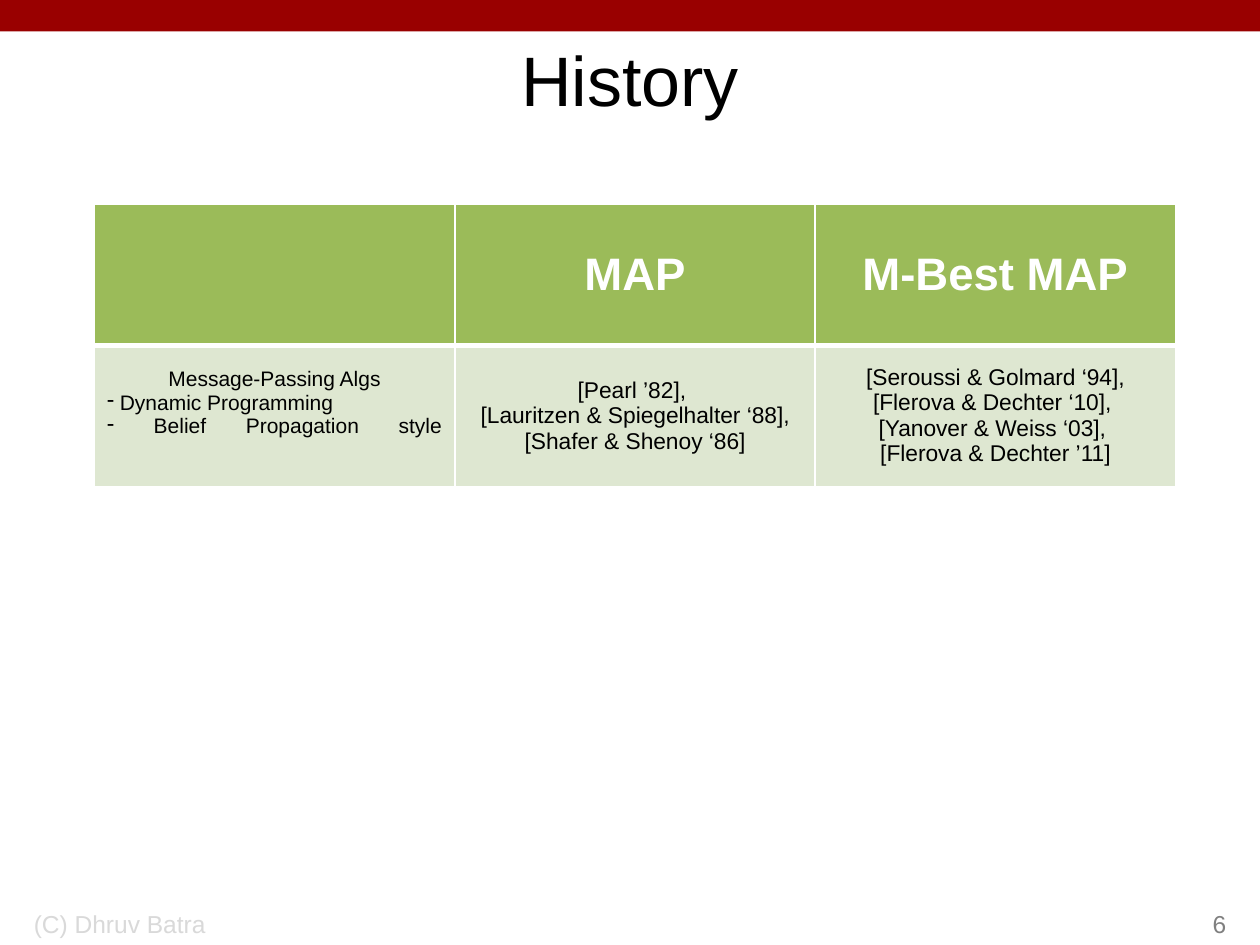
"""Build the History slide: a table of MAP and M-Best MAP references."""
import lxml.etree
import pptx
import pptx.dml.color
import pptx.enum.shapes
import pptx.enum.text
import pptx.oxml.ns
import pptx.util

Inches = pptx.util.Inches
Pt = pptx.util.Pt
ALIGN = pptx.enum.text.PP_ALIGN
ANCHOR = pptx.enum.text.MSO_ANCHOR
qn = pptx.oxml.ns.qn

COLORS = {"bar": "990000", "header": "9BBB59", "body": "DEE7D1", "white": "FFFFFF",
          "black": "000000", "credit": "D9D9D9", "number": "808080"}
FONT = "Arial"
WIDTH, HEIGHT = 10, 7.5
TABLE_LEFT, TABLE_TOP, COLUMN_WIDTH, ROW_HEIGHT = 0.75, 1.62, 2.86, 1.12

TITLE = "History"
HEADERS = ["", "MAP", "M-Best MAP"]
METHOD = ["Message-Passing Algs", " Dynamic Programming", " Belief Propagation style\n"]
REFERENCES = [
    "[Pearl ’82], \n[Lauritzen & Spiegelhalter ‘88], [Shafer & Shenoy ‘86]",
    "[Seroussi & Golmard ‘94], [Flerova & Dechter ‘10], \n"
    "[Yanover & Weiss ‘03], \n[Flerova & Dechter ’11]",
]
FOOTERS = [
    ("(C) Dhruv Batra", 0.17, 3.17, ALIGN.LEFT, "credit"),
    ("6", 7.75, 2.08, ALIGN.RIGHT, "number"),
]


def rgb(name):
    return pptx.dml.color.RGBColor.from_string(COLORS[name])


def write(para, text, size, color, align=ALIGN.CENTER, bold=False):
    para.text = text
    para.alignment = align
    for span in para.runs:
        span.font.name = FONT
        span.font.size = Pt(size)
        span.font.bold = bold
        span.font.color.rgb = rgb(color)
    for line_break in para._p.findall(qn("a:br")):
        lxml.etree.SubElement(line_break, qn("a:rPr"), sz=str(size * 100))
    lxml.etree.SubElement(para._p, qn("a:endParaRPr"), sz=str(size * 100))


def add_dash(para):
    properties = para._p.get_or_add_pPr()
    properties.set("marL", "0")
    properties.set("indent", "0")
    lxml.etree.SubElement(properties, qn("a:buChar"), char="-")


def style_cell(cell, fill, top, bottom):
    properties = cell._tc.get_or_add_tcPr()
    for side, points in (("L", 1), ("R", 1), ("T", top), ("B", bottom)):
        line = lxml.etree.SubElement(properties, qn(f"a:ln{side}"), w=str(Pt(points)))
        solid = lxml.etree.SubElement(line, qn("a:solidFill"))
        lxml.etree.SubElement(solid, qn("a:srgbClr"), val=COLORS["white"])
    cell.fill.solid()
    cell.fill.fore_color.rgb = rgb(fill)
    cell.vertical_anchor = ANCHOR.MIDDLE


def add_history_table(page):
    columns = len(HEADERS)
    table = page.shapes.add_table(
        2, columns, Inches(TABLE_LEFT), Inches(TABLE_TOP),
        Inches(COLUMN_WIDTH * columns), Inches(ROW_HEIGHT * 2)).table
    for column in table.columns:
        column.width = Inches(COLUMN_WIDTH)
    for row in table.rows:
        row.height = Inches(ROW_HEIGHT)

    for index, header in enumerate(HEADERS):
        style_cell(table.cell(0, index), "header", 1, 3)
        style_cell(table.cell(1, index), "body", 3, 1)
        write(table.cell(0, index).text_frame.paragraphs[0], header, 26, "white", bold=True)

    frame = table.cell(1, 0).text_frame
    write(frame.paragraphs[0], METHOD[0], 12, "black")
    for item in METHOD[1:]:
        para = frame.add_paragraph()
        write(para, item, 12, "black", ALIGN.JUSTIFY)
        add_dash(para)
    for index, reference in enumerate(REFERENCES, 1):
        write(table.cell(1, index).text_frame.paragraphs[0], reference, 13, "black")


def main():
    deck = pptx.Presentation()
    deck.slide_width, deck.slide_height = Inches(WIDTH), Inches(HEIGHT)
    page = deck.slides.add_slide(deck.slide_layouts[5])

    bar = page.shapes.add_shape(
        pptx.enum.shapes.MSO_SHAPE.RECTANGLE, 0, 0, Inches(WIDTH), Inches(0.25))
    bar.shadow.inherit = False
    bar.fill.solid()
    bar.fill.fore_color.rgb = rgb("bar")
    bar.line.fill.background()

    title = page.shapes.title
    title.left, title.top = Inches(0.75), Inches(0.25)
    title.width, title.height = Inches(8.5), Inches(0.75)
    title.text_frame.vertical_anchor = ANCHOR.MIDDLE
    write(title.text_frame.paragraphs[0], TITLE, 40, "black")

    add_history_table(page)

    for text, left, width, align, color in FOOTERS:
        box = page.shapes.add_textbox(Inches(left), Inches(7), Inches(width), Inches(0.5))
        box.text_frame.word_wrap = True
        box.text_frame.vertical_anchor = ANCHOR.BOTTOM
        write(box.text_frame.paragraphs[0], text, 14, color, align)

    deck.save("out.pptx")


if __name__ == "__main__":
    main()
